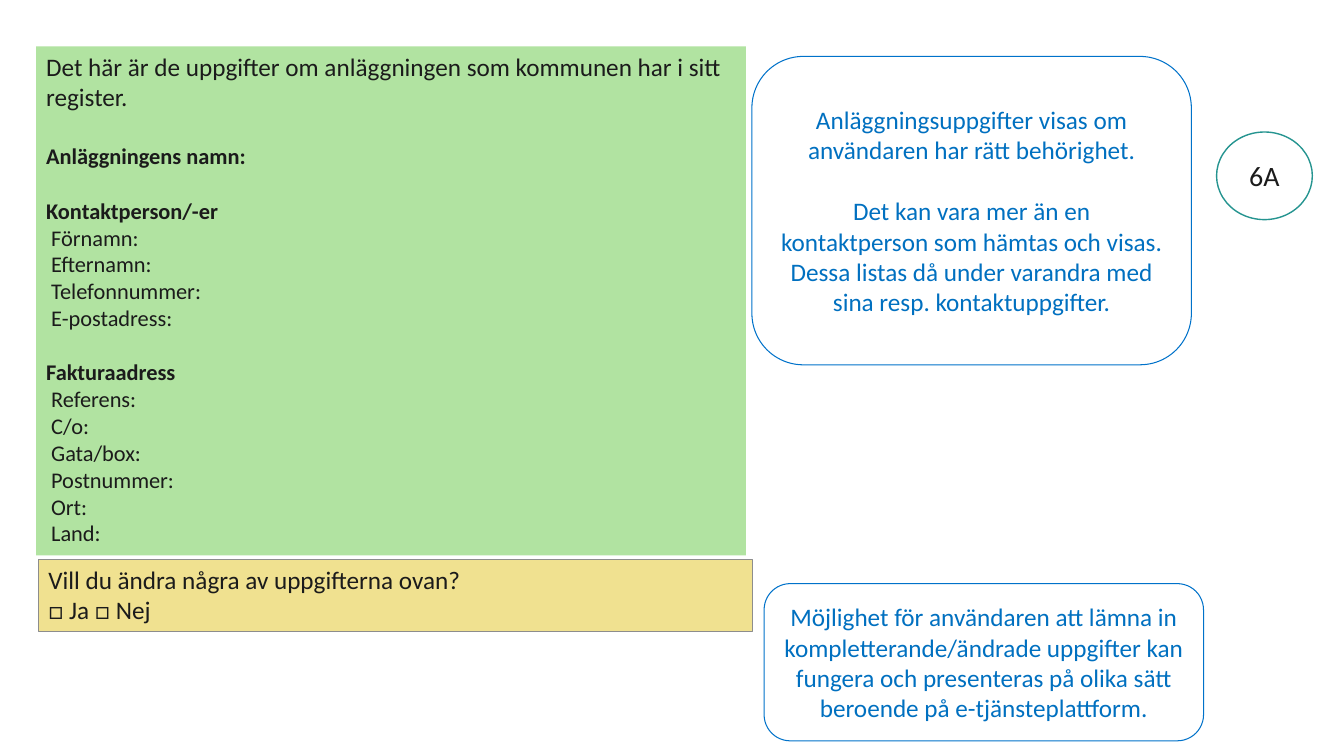
from dataclasses import dataclass
from typing import Optional

from pptx import Presentation
from pptx.dml.color import RGBColor
from pptx.enum.shapes import MSO_SHAPE
from pptx.enum.text import MSO_ANCHOR, MSO_AUTO_SIZE, PP_ALIGN
from pptx.util import Pt

COLORS = {
    "ink": "1B1B1B",
    "note_text": "0070C0",
    "note_line": "0072CA",
    "register": "B1E3A1",
    "question": "F0E190",
    "question_line": "8D8D8D",
    "badge": "FFFFFF",
    "badge_line": "259490",
}
LARGE_LINE = 22
SMALL_LINE = 19.5
FIELD_INDENT = 3.6


@dataclass(frozen=True)
class Line:
    text: str
    size: float = 18
    bold: bool = False
    space_before: float = 0
    indent: float = 0


@dataclass(frozen=True)
class Box:
    kind: MSO_SHAPE
    left: float
    top: float
    width: float
    height: float
    lines: list[Line]
    text_color: str = "ink"
    fill: Optional[str] = None
    line: Optional[str] = None
    line_width: float = 0.75
    centered: bool = True


def heading(text: str, space_before: float) -> Line:
    return Line(text, 16, True, space_before)


def fields(*labels: str) -> list[Line]:
    return [Line(f"{label}:", 16, indent=FIELD_INDENT) for label in labels]


def note(left: float, top: float, height: float, lines: list[Line]) -> Box:
    return Box(MSO_SHAPE.ROUNDED_RECTANGLE, left, top, 313.9, height, lines,
               "note_text", line="note_line")


REGISTER_LINES = [
    Line("Det här är de uppgifter om anläggningen som kommunen har i sitt register."),
    heading("Anläggningens namn:", LARGE_LINE),
    heading("Kontaktperson/-er", SMALL_LINE),
    *fields("Förnamn", "Efternamn", "Telefonnummer", "E-postadress"),
    heading("Fakturaadress", SMALL_LINE),
    *fields("Referens", "C/o", "Gata/box", "Postnummer", "Ort", "Land"),
]

BOXES = [
    Box(MSO_SHAPE.RECTANGLE, 25.9, 33.1, 506.9, 363.6, REGISTER_LINES,
        fill="register", centered=False),
    note(537.1, 40.3, 220.3, [
        Line("Anläggningsuppgifter visas om användaren har rätt behörighet."),
        Line("Det kan vara mer än en kontaktperson som hämtas och visas. "
             "Dessa listas då under varandra med sina resp. kontaktuppgifter.",
             space_before=LARGE_LINE),
    ]),
    Box(MSO_SHAPE.OVAL, 869, 94.3, 68.4, 62.6, [Line("6A", 20)],
        fill="badge", line="badge_line", line_width=1),
    note(545.8, 416.9, 112.3, [
        Line("Möjlighet för användaren att lämna in kompletterande/ändrade "
             "uppgifter kan fungera och presenteras på olika sätt beroende på "
             "e-tjänsteplattform."),
    ]),
    Box(MSO_SHAPE.RECTANGLE, 27.4, 399.6, 509.8, 51.1, [
        Line("Vill du ändra några av uppgifterna ovan?"),
        Line("□ Ja □ Nej"),
    ], fill="question", line="question_line", line_width=0.5, centered=False),
]


def color(name: str) -> RGBColor:
    return RGBColor.from_string(COLORS[name])


def add_line(paragraph, line: Line, box: Box) -> None:
    paragraph.alignment = PP_ALIGN.CENTER if box.centered else PP_ALIGN.LEFT
    if line.space_before:
        paragraph.space_before = Pt(line.space_before)
    if line.indent:
        paragraph._p.get_or_add_pPr().set("marL", str(Pt(line.indent)))
    run = paragraph.add_run()
    run.text = line.text
    font_format = {"name": "Calibri", "size": Pt(line.size), "bold": line.bold}
    for attribute, value in font_format.items():
        setattr(run.font, attribute, value)
    run.font.color.rgb = color(box.text_color)


def add_box(slide, box: Box) -> None:
    shape = slide.shapes.add_shape(
        box.kind, Pt(box.left), Pt(box.top), Pt(box.width), Pt(box.height))
    shape.shadow.inherit = False
    if box.fill:
        shape.fill.solid()
        shape.fill.fore_color.rgb = color(box.fill)
    else:
        shape.fill.background()
    if box.line:
        shape.line.color.rgb = color(box.line)
        shape.line.width = Pt(box.line_width)
    else:
        shape.line.fill.background()
    frame = shape.text_frame
    frame_format = {
        "word_wrap": True,
        "vertical_anchor": MSO_ANCHOR.MIDDLE if box.centered else MSO_ANCHOR.TOP,
        "auto_size": MSO_AUTO_SIZE.NONE if box.centered
        else MSO_AUTO_SIZE.SHAPE_TO_FIT_TEXT,
    }
    for attribute, value in frame_format.items():
        setattr(frame, attribute, value)
    for index, line in enumerate(box.lines):
        paragraph = frame.add_paragraph() if index else frame.paragraphs[0]
        add_line(paragraph, line, box)


def main() -> None:
    presentation = Presentation()
    presentation.slide_width = Pt(960)
    presentation.slide_height = Pt(540)
    slide = presentation.slides.add_slide(presentation.slide_layouts[6])
    for box in BOXES:
        add_box(slide, box)
    presentation.save("out.pptx")


if __name__ == "__main__":
    main()
